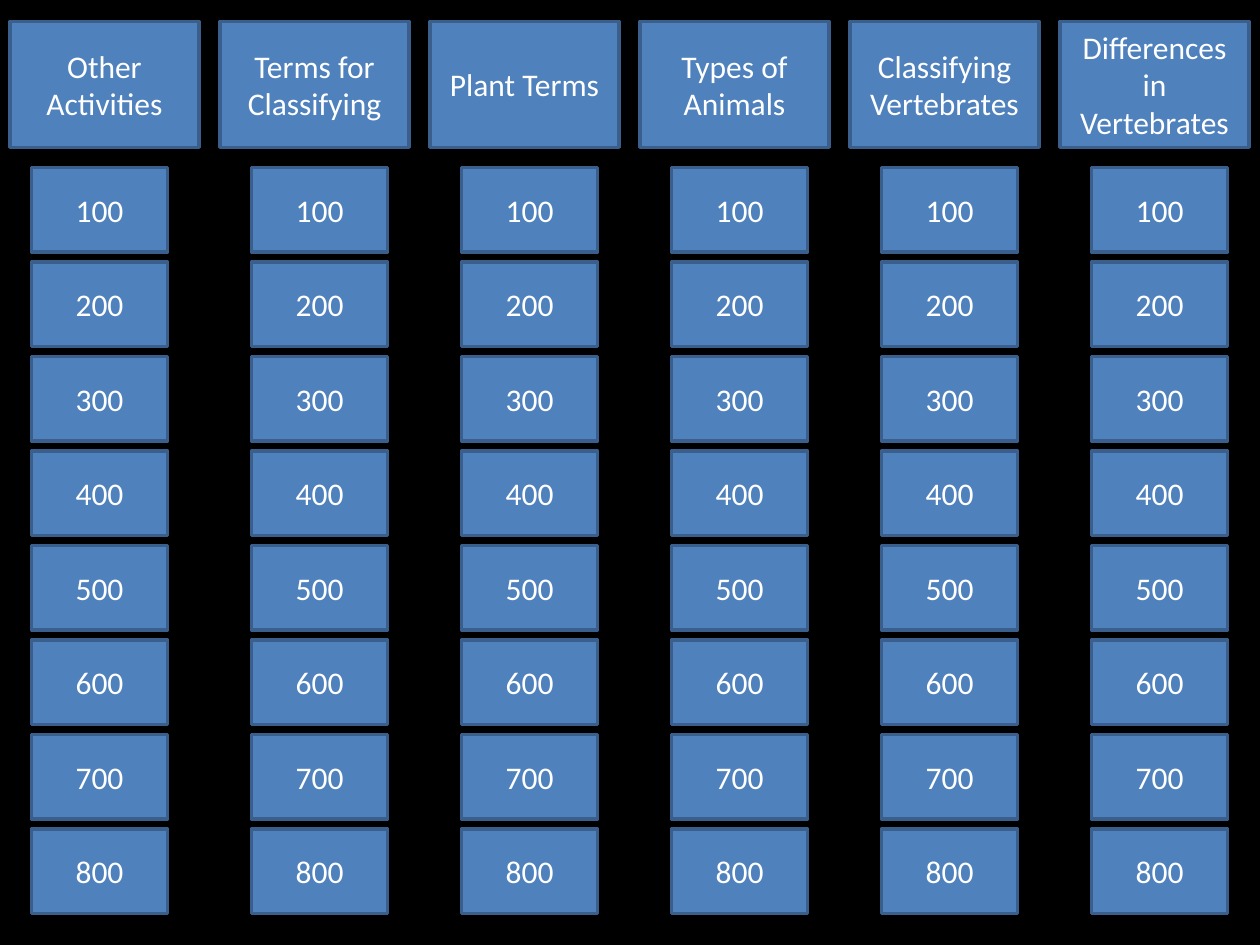
"""Build a quiz board with six categories and eight point values each."""
from pptx import Presentation
from pptx.dml.color import RGBColor
from pptx.enum.shapes import MSO_SHAPE
from pptx.enum.text import MSO_ANCHOR, PP_ALIGN
from pptx.util import Inches, Pt

RECTANGLE = MSO_SHAPE.RECTANGLE
MIDDLE = MSO_ANCHOR.MIDDLE
CENTER = PP_ALIGN.CENTER

CATEGORIES = [
    "Other Activities",
    "Terms for Classifying",
    "Plant Terms",
    "Types of Animals",
    "Classifying Vertebrates",
    "Differences in Vertebrates",
]
POINTS = range(100, 900, 100)
COLUMN_PITCH = 10 / len(CATEGORIES)
ROW_PITCH = 0.75


def color(hex_string):
    return RGBColor.from_string(hex_string)


def add_tile(slide, text, left, top, width, height):
    shape = slide.shapes.add_shape(
        RECTANGLE, Inches(left), Inches(top), Inches(width), Inches(height)
    )
    shape.shadow.inherit = False
    shape.fill.solid()
    shape.fill.fore_color.rgb = color("4F81BD")
    shape.line.color.rgb = color("3A5F8C")
    shape.line.width = Pt(2)
    text_frame = shape.text_frame
    text_frame.word_wrap = True
    text_frame.vertical_anchor = MIDDLE
    paragraph = text_frame.paragraphs[0]
    paragraph.text = text
    paragraph.alignment = CENTER
    paragraph.font.name = "Calibri"
    paragraph.font.size = Pt(18)
    paragraph.font.color.rgb = color("FFFFFF")


presentation = Presentation()
presentation.slide_width = Inches(10)
presentation.slide_height = Inches(7.5)
slide = presentation.slides.add_slide(presentation.slide_layouts[6])
slide.background.fill.solid()
slide.background.fill.fore_color.rgb = color("000000")

for column, category in enumerate(CATEGORIES):
    header_left = 0.08 + column * COLUMN_PITCH
    add_tile(slide, category, header_left, 0.17, 1.5, 1)
    tile_left = header_left + (0.25 if column else 0.17)
    for row, points in enumerate(POINTS):
        add_tile(slide, str(points), tile_left, 1.33 + row * ROW_PITCH, 1.08, 0.67)

presentation.save("out.pptx")
